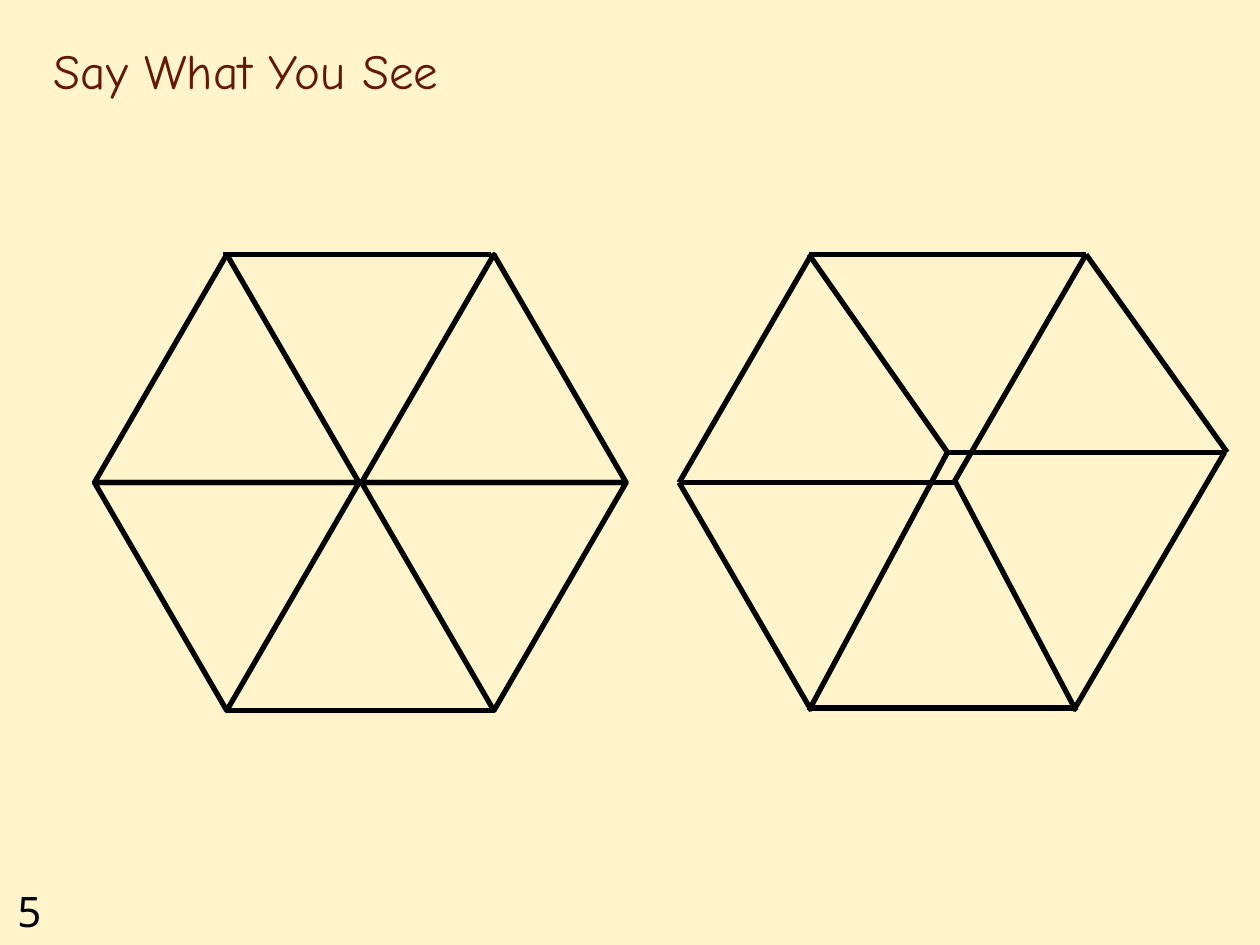
from lxml import etree
from pptx import Presentation
from pptx.dml.color import RGBColor
from pptx.enum.shapes import MSO_CONNECTOR, MSO_SHAPE
from pptx.enum.text import MSO_ANCHOR
from pptx.oxml.ns import qn
from pptx.util import Inches, Pt

STRAIGHT = MSO_CONNECTOR.STRAIGHT
TRIANGLE = MSO_SHAPE.ISOSCELES_TRIANGLE
TOP, BOTTOM = MSO_ANCHOR.TOP, MSO_ANCHOR.BOTTOM

COLORS = {"background": "FFF2C0", "title": "631908", "ink": "000000"}
BACKGROUND_OPACITY = 82
LINE_WIDTH = 3

# text, (left, top, width, height), font, size, color, anchor
TEXTS = [
    ("5", (0.04, 6.98, 0.75, 0.5), "Noto Sans", 24, "ink", TOP),
    ("Say What You See", (0.33, 0.17, 8.5, 0.67), "Comic Neue", 28, "title", BOTTOM),
]

# Regular hexagon: two columns and two rows of triangles, the lower row flipped
TRIANGLE_WIDTH, TRIANGLE_HEIGHT = 2.1, 1.81
COLUMN_LEFTS = (0.75, 2.87)
ROW_TOPS = (2.02, 3.83)
HEXAGON_EDGES = [
    ((1.8, 5.64), (3.92, 5.64)),
    ((1.77, 2.02), (3.9, 2.02)),
]

# Distorted hexagon whose spokes miss a common centre
DISTORTED_EDGES = [
    ((6.43, 5.62), (8.53, 5.62)),
    ((6.44, 5.64), (5.39, 3.83)),
    ((8.54, 5.64), (7.58, 3.82)),
    ((5.39, 3.83), (7.6, 3.83)),
    ((6.42, 2.02), (8.62, 2.02)),
    ((5.39, 3.83), (6.44, 2.02)),
    ((7.57, 3.83), (8.62, 2.02)),
    ((6.42, 5.64), (7.52, 3.59)),
    ((8.52, 5.64), (9.72, 3.59)),
    ((7.52, 3.59), (9.72, 3.59)),
    ((9.74, 3.59), (8.62, 2.02)),
    ((7.52, 3.59), (6.42, 2.02)),
]


def color(name):
    return RGBColor.from_string(COLORS[name])


def set_background(slide):
    fill = slide.background.fill
    fill.solid()
    fill.fore_color.rgb = color("background")
    background_color = next(slide.element.iter(qn("a:srgbClr")))
    alpha = etree.SubElement(background_color, qn("a:alpha"))
    alpha.set("val", str(BACKGROUND_OPACITY * 1000))


def add_text(slide, text, box, font_name, size, color_name, anchor):
    frame = slide.shapes.add_textbox(*map(Inches, box)).text_frame
    frame.word_wrap = True
    frame.vertical_anchor = anchor
    paragraph = frame.paragraphs[0]
    paragraph.text = text
    paragraph.font.name = font_name
    paragraph.font.size = Pt(size)
    paragraph.font.color.rgb = color(color_name)


def style_line(shape):
    shape.line.color.rgb = color("ink")
    shape.line.width = Pt(LINE_WIDTH)


def add_triangle(group, left, top, flipped):
    box = (left, top, TRIANGLE_WIDTH, TRIANGLE_HEIGHT)
    shape = group.shapes.add_shape(TRIANGLE, *map(Inches, box))
    shape.shadow.inherit = False
    shape.fill.background()
    style_line(shape)
    if flipped:
        shape.element.spPr.find(qn("a:xfrm")).set("flipV", "1")


def add_edges(group, edges):
    for start, end in edges:
        edge = group.shapes.add_connector(STRAIGHT, *map(Inches, start + end))
        style_line(edge)
        etree.SubElement(edge.element.spPr, qn("a:effectLst"))


def main():
    presentation = Presentation()
    presentation.slide_width = Inches(10)
    presentation.slide_height = Inches(7.5)
    slide = presentation.slides.add_slide(presentation.slide_layouts[6])
    set_background(slide)
    for text in TEXTS:
        add_text(slide, *text)

    hexagon = slide.shapes.add_group_shape()
    for row, top in enumerate(ROW_TOPS):
        for left in COLUMN_LEFTS:
            add_triangle(hexagon, left, top, flipped=row == 1)
    add_edges(hexagon, HEXAGON_EDGES)
    add_edges(slide.shapes.add_group_shape(), DISTORTED_EDGES)

    presentation.save("out.pptx")


if __name__ == "__main__":
    main()
